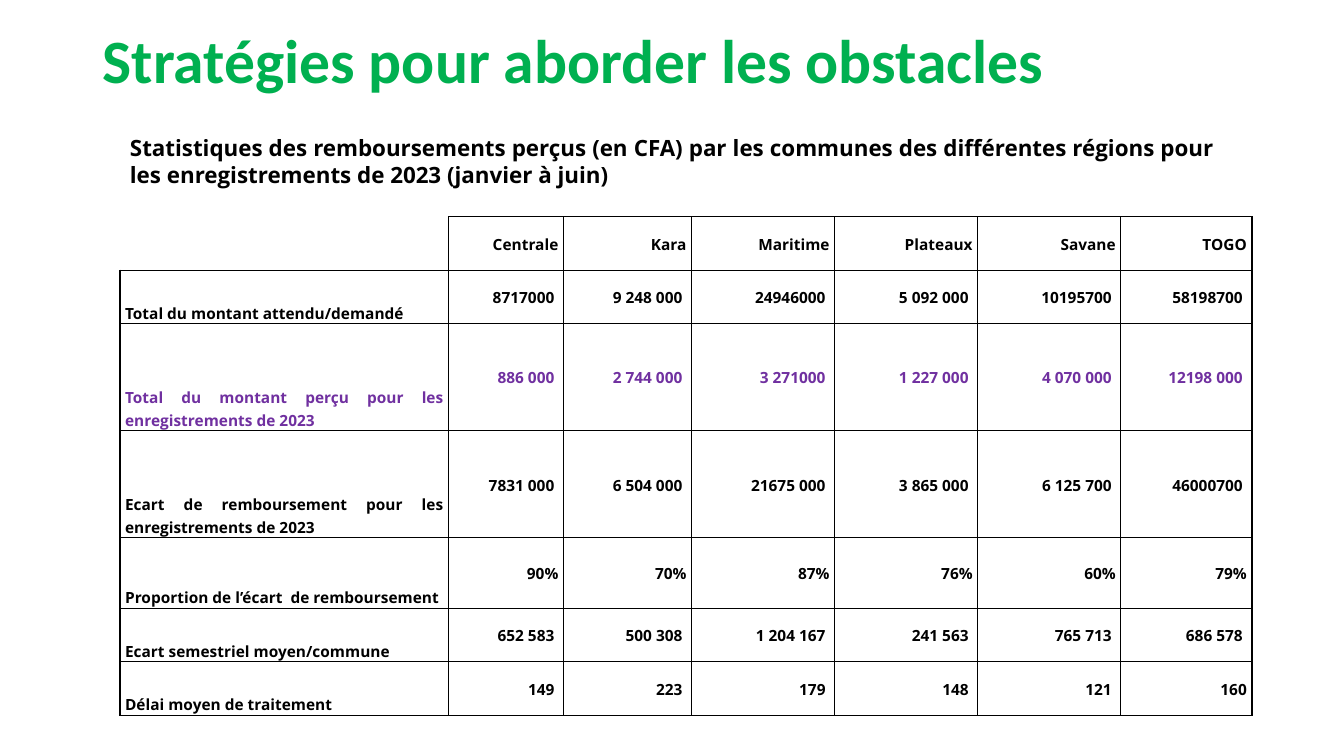
from dataclasses import dataclass

from lxml.etree import SubElement
from pptx import Presentation
from pptx.dml.color import RGBColor
from pptx.enum.text import MSO_ANCHOR as Anchor, MSO_AUTO_SIZE as AutoSize, PP_ALIGN as Align
from pptx.oxml.ns import qn
from pptx.util import Inches, Pt

SLIDE_WIDTH, SLIDE_HEIGHT = Inches(13.33), Inches(7.5)
BLACK, GREEN, PURPLE = "000000", "00B050", "7030A0"
TITLE_FONT, BODY_FONT = "Calibri", "Open Sans"

# Cell insets: amounts stand a little further from the right edge
INSET, AMOUNT_INSET = Inches(0.05), Inches(0.09)


@dataclass(frozen=True)
class Box:
    """Position and size in percent of the slide."""
    left: float
    top: float
    width: float
    height: float


@dataclass(frozen=True)
class Row:
    label: str
    values: tuple[str, ...]
    height: float  # percent of the slide's height
    color: str = BLACK
    flush: int = 0  # how many of the last values touch the plain inset


TITLE_BOX = Box(6.9, 2.8, 86.27, 11.33)
SUBTITLE_BOX = Box(8.93, 17.07, 82.15, 8.53)
TABLE_BOX = Box(8.93, 28.67, 84.2, 65.9)
COLUMN_WIDTHS = (24.45, 8.55, 9.53, 10.65, 10.65, 10.65, 9.75)
SINGLE, DOUBLE, MEDIUM = 7.08, 14.16, 9.33

ROWS = (
    Row("", ("Centrale", "Kara", "Maritime", "Plateaux", "Savane", "TOGO"), SINGLE, flush=6),
    Row("Total du montant attendu/demandé",
        ("8717000", "9 248 000", "24946000", "5 092 000", "10195700", "58198700"), SINGLE),
    Row("Total du montant perçu pour les enregistrements de 2023",
        ("886 000", "2 744 000", "3 271000", "1 227 000", "4 070 000", "12198 000"),
        DOUBLE, PURPLE),
    Row("Ecart de remboursement pour les enregistrements de 2023",
        ("7831 000", "6 504 000", "21675 000", "3 865 000", "6 125 700", "46000700"), DOUBLE),
    Row("Proportion de l’écart  de remboursement",
        ("90%", "70%", "87%", "76%", "60%", "79%"), MEDIUM, flush=6),
    Row("Ecart semestriel moyen/commune",
        ("652 583", "500 308", "1 204 167", "241 563", "765 713", "686 578"), SINGLE),
    Row("Délai moyen de traitement",
        ("149", "223", "179", "148", "121", "160"), SINGLE, flush=1),
)


def rgb(color: str) -> RGBColor:
    return RGBColor.from_string(color)


def across(percent: float) -> int:
    return round(SLIDE_WIDTH * percent / 100)


def down(percent: float) -> int:
    return round(SLIDE_HEIGHT * percent / 100)


def place(box: Box) -> tuple[int, int, int, int]:
    return across(box.left), down(box.top), across(box.width), down(box.height)


def write(frame, text: str, size: int, font: str, color: str, align: Align,
          line_spacing: float = 1.0):
    """Put one bold run in the first paragraph and return the paragraph."""
    paragraph = frame.paragraphs[0]
    paragraph.alignment = align
    paragraph.line_spacing = line_spacing
    run = paragraph.add_run()
    run.text = text
    run.font.size, run.font.name, run.font.bold = Pt(size), font, True
    run.font.color.rgb = rgb(color)
    return paragraph


def outline_cell(cell, sides: str) -> None:
    """Draw thin black borders on the given sides (L, R, T, B), none elsewhere."""
    properties = cell._tc.get_or_add_tcPr()
    for side in "LRTB":
        line = SubElement(properties, qn(f"a:ln{side}"), w=str(Pt(1)))
        if side in sides:
            fill = SubElement(line, qn("a:solidFill"))
            SubElement(fill, qn("a:srgbClr"), val=BLACK)
        else:
            SubElement(line, qn("a:noFill"))
    cell.fill.background()


def fill_cell(cell, text: str, color: str, align: Align, anchor: Anchor, right: int) -> None:
    cell.margin_left, cell.margin_right = INSET, right
    cell.margin_top = cell.margin_bottom = 0
    cell.vertical_anchor = anchor
    write(cell.text_frame, text, 11, BODY_FONT, color, align, 1.07)


def add_title(slide) -> None:
    title = slide.shapes.title
    title.left, title.top, title.width, title.height = place(TITLE_BOX)
    frame = title.text_frame
    frame.auto_size, frame.vertical_anchor = AutoSize.NONE, Anchor.MIDDLE
    write(frame, "Stratégies pour aborder les obstacles", 44, TITLE_FONT, GREEN, Align.LEFT, 0.9)


def add_subtitle(slide) -> None:
    frame = slide.shapes.add_textbox(*place(SUBTITLE_BOX)).text_frame
    frame.word_wrap, frame.auto_size = True, AutoSize.SHAPE_TO_FIT_TEXT
    text = ("Statistiques des remboursements perçus (en CFA) par les communes des "
            "différentes régions pour les enregistrements de 2023 (janvier à juin)")
    write(frame, text, 16, BODY_FONT, BLACK, Align.JUSTIFY).space_after = Pt(10)


def add_statistics_table(slide) -> None:
    shape = slide.shapes.add_table(len(ROWS), len(COLUMN_WIDTHS), *place(TABLE_BOX))
    table = shape.table
    table.first_row = table.horz_banding = False
    for column, width in zip(table.columns, COLUMN_WIDTHS):
        column.width = across(width)
    for row_index, row in enumerate(ROWS):
        table.rows[row_index].height = down(row.height)
        # Label, or the empty corner
        label_cell = table.cell(row_index, 0)
        outline_cell(label_cell, "LRTB" if row.label else "RB")
        if row.label:
            fill_cell(label_cell, row.label, row.color, Align.JUSTIFY, Anchor.BOTTOM, INSET)
        # Values
        for column_index, value in enumerate(row.values, start=1):
            cell = table.cell(row_index, column_index)
            is_flush = column_index > len(row.values) - row.flush
            outline_cell(cell, "LRTB")
            fill_cell(cell, value, row.color, Align.RIGHT, Anchor.MIDDLE,
                      INSET if is_flush else AMOUNT_INSET)


def main() -> None:
    presentation = Presentation()
    presentation.slide_width, presentation.slide_height = SLIDE_WIDTH, SLIDE_HEIGHT
    slide = presentation.slides.add_slide(presentation.slide_layouts.get_by_name("Title Only"))
    add_title(slide)
    add_statistics_table(slide)
    add_subtitle(slide)
    presentation.save("out.pptx")


if __name__ == "__main__":
    main()
